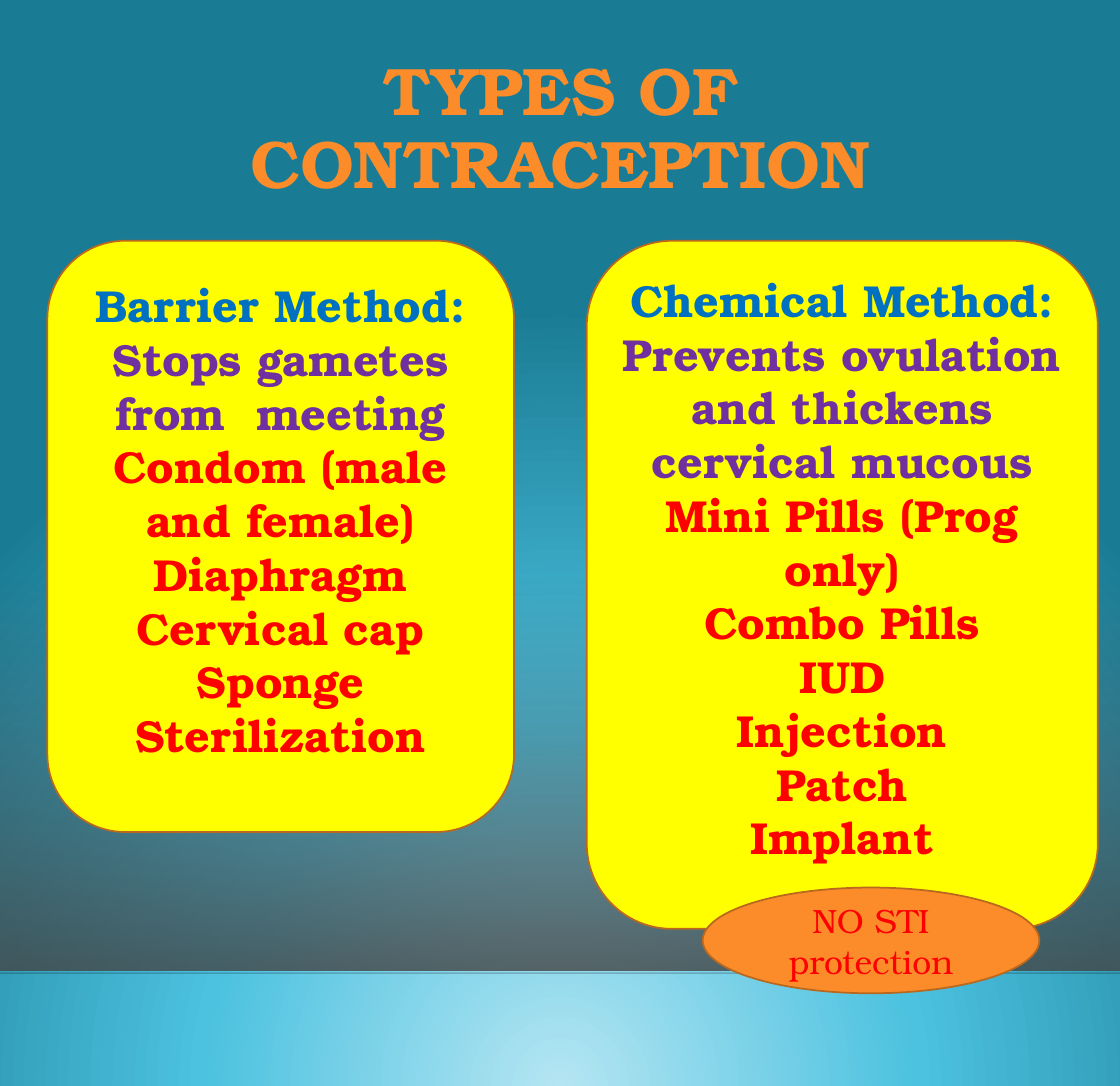
from dataclasses import dataclass

from lxml import etree
from pptx import Presentation
from pptx import util as u
from pptx.dml.color import RGBColor
from pptx.enum import shapes, text
from pptx.oxml import parse_xml
from pptx.oxml.ns import nsdecls, qn


@dataclass
class Theme:
    font: str = "TeX Gyre Bonum"
    orange: str = "FB8C29"
    brown: str = "BA681E"
    yellow: str = "FFFF00"
    blue: str = "0070C0"
    purple: str = "7030A0"
    red: str = "FF0000"
    shade: str = "454545"
    horizon: str = "000001"
    glow: tuple = (("B4E5F2", 0, 100), ("4CC2E0", 46, 100), ("1A7B94", 100, 100))
    title_size: int = 48
    list_size: int = 32
    note_size: int = 24


theme = Theme()


def write_text(frame, lines, size, bold=True, spacing=1.0, bottom=0.05):
    frame.word_wrap = True
    frame.auto_size = text.MSO_AUTO_SIZE.NONE
    frame.vertical_anchor = text.MSO_ANCHOR.MIDDLE
    frame.margin_bottom = u.Inches(bottom)
    for index, (words, color) in enumerate(lines):
        para = frame.add_paragraph() if index else frame.paragraphs[0]
        para.alignment = text.PP_ALIGN.CENTER
        para.line_spacing = spacing
        para.space_before = u.Pt(0)
        span = para.add_run()
        span.text = words
        span.font.name = theme.font
        span.font.size = u.Pt(size)
        span.font.bold = bold
        span.font.color.rgb = RGBColor.from_string(color)


def fill_gradient(owner, fill, stops, direction):
    fill.solid()
    plain = owner.find(".//" + qn("a:solidFill"))
    stop_xml = "".join(
        f'<a:gs pos="{place * 1000}"><a:srgbClr val="{color}">'
        f'<a:alpha val="{alpha * 1000}"/></a:srgbClr></a:gs>'
        for color, place, alpha in stops
    )
    gradient = parse_xml(
        f'<a:gradFill {nsdecls("a")} rotWithShape="1">'
        f"<a:gsLst>{stop_xml}</a:gsLst>{direction}</a:gradFill>"
    )
    plain.getparent().replace(plain, gradient)


deck = Presentation()
deck.slide_width = u.Pt(800)
deck.slide_height = u.Pt(776)
col = deck.slide_width / 100
row = deck.slide_height / 100
page = deck.slides.add_slide(deck.slide_layouts[5])

fill_gradient(
    page.element,
    page.background.fill,
    theme.glow,
    '<a:path path="circle"><a:fillToRect l="50000" t="130000" r="50000" b="-30000"/></a:path>',
)

wall = page.shapes.add_shape(
    shapes.MSO_SHAPE.RECTANGLE, 0, int(52.78 * row), deck.slide_width, int(36.64 * row)
)
wall.shadow.inherit = False
fill_gradient(
    wall.element,
    wall.fill,
    ((theme.shade, 0, 0), (theme.shade, 100, 80)),
    '<a:lin ang="5400000" scaled="0"/>',
)
wall.line.fill.background()

floor_y = int(89.61 * row)
horizon = page.shapes.add_connector(
    shapes.MSO_CONNECTOR.STRAIGHT, 0, floor_y, deck.slide_width, floor_y
)
horizon.line.width = u.Pt(1)
horizon.line.color.rgb = RGBColor.from_string(theme.horizon)
line_color = horizon.element.find(".//" + qn("a:srgbClr"))
etree.SubElement(line_color, qn("a:alpha")).set("val", "20000")
etree.SubElement(horizon.element.spPr, qn("a:effectLst"))

title = page.shapes.title
title.left, title.top = int(15.84 * col), int(4.36 * row)
title.width, title.height = int(68.41 * col), int(15.31 * row)
write_text(
    title.text_frame,
    [("TYPES OF CONTRACEPTION", theme.orange)],
    theme.title_size,
    spacing=0.9,
)

barrier_methods = ["Condom (male and female)", "Diaphragm", "Cervical cap", "Sponge", "Sterilization"]
chemical_methods = ["Mini Pills (Prog only)", "Combo Pills", "IUD", "Injection", "Patch", "Implant"]
barrier_lines = [
    ("Barrier Method:", theme.blue),
    ("Stops gametes from  meeting", theme.purple),
] + [(method, theme.red) for method in barrier_methods]
chemical_lines = [
    ("Chemical Method:", theme.blue),
    ("Prevents ovulation and thickens cervical mucous", theme.purple),
] + [(method, theme.red) for method in chemical_methods]
note_lines = [("NO STI protection", theme.red)]

card = shapes.MSO_SHAPE.ROUNDED_RECTANGLE
badge = shapes.MSO_SHAPE.OVAL
card_format = dict(size=theme.list_size, bottom=0.38)
note_format = dict(size=theme.note_size, bold=False)
panels = [
    (card, 4.23, 22.17, 41.67, 54.45, theme.yellow, barrier_lines, card_format),
    (card, 52.39, 22.17, 45.63, 63.36, theme.yellow, chemical_lines, card_format),
    (badge, 62.74, 81.73, 30.06, 9.74, theme.orange, note_lines, note_format),
]
for kind, left, top, width, height, color, lines, style in panels:
    box = page.shapes.add_shape(
        kind, int(left * col), int(top * row), int(width * col), int(height * row)
    )
    box.shadow.inherit = False
    box.fill.solid()
    box.fill.fore_color.rgb = RGBColor.from_string(color)
    box.line.color.rgb = RGBColor.from_string(theme.brown)
    box.line.width = u.Pt(1.25)
    write_text(box.text_frame, lines, **style)

deck.save("out.pptx")
